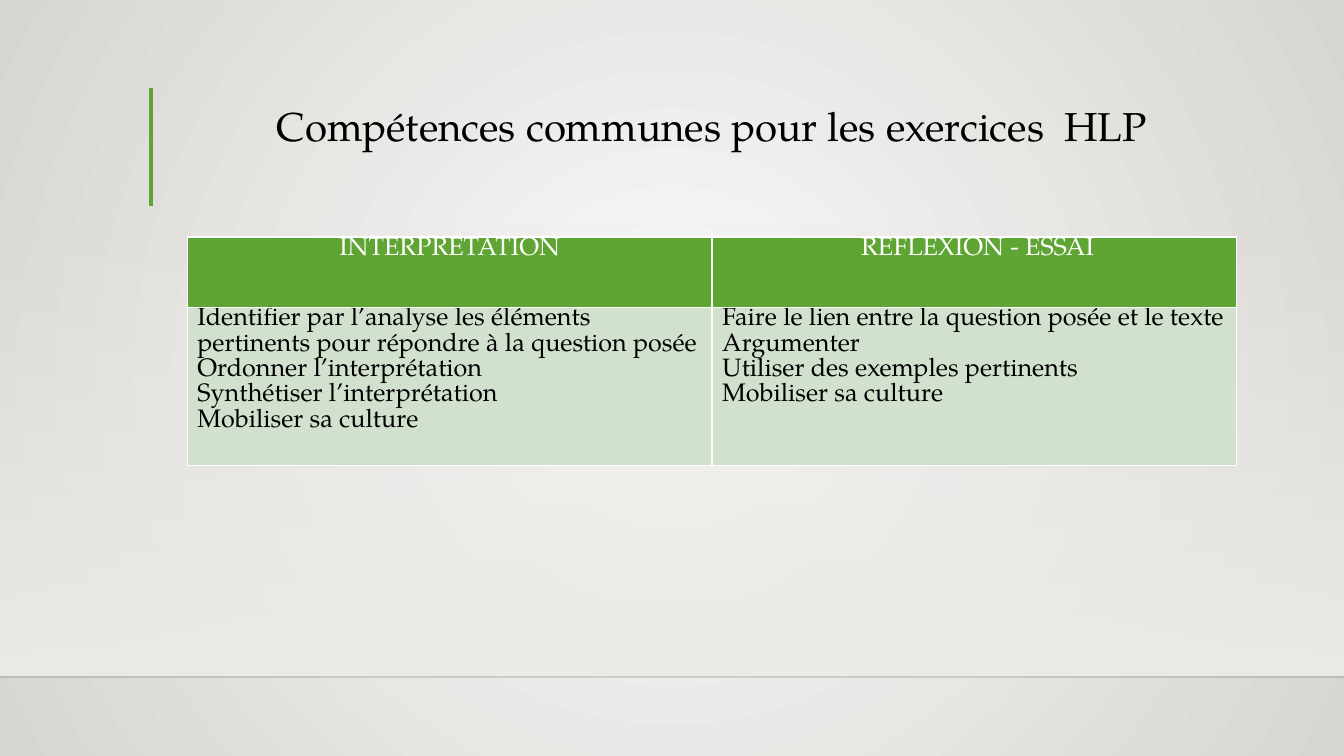
"""Builds the slide on the skills shared by the HLP exercises."""
from lxml import etree
from pptx import Presentation
from pptx.dml.color import RGBColor
from pptx.enum.shapes import MSO_CONNECTOR as CONN, MSO_SHAPE as SHAPE
from pptx.enum.text import MSO_ANCHOR as ANCHOR, PP_ALIGN as ALIGN
from pptx.oxml.ns import qn
from pptx.util import Cm, Pt

TITLE = "Compétences communes pour les exercices\u00a0 HLP"
COLUMNS = [
    ("INTERPRETATION", [
        "Identifier par l’analyse les éléments pertinents pour répondre à la question posée",
        "Ordonner l’interprétation",
        "Synthétiser l’interprétation",
        "Mobiliser sa culture",
    ]),
    (" REFLEXION - ESSAI", [
        "Faire le lien entre la question posée et le texte",
        "Argumenter",
        "Utiliser des exemples pertinents",
        "Mobiliser sa culture",
    ]),
]

FONT = "TeX Gyre Pagella"
BLACK = RGBColor(0, 0, 0)
WHITE = RGBColor(255, 255, 255)
GREEN = RGBColor(0x5F, 0xA5, 0x34)
PALE_GREEN = RGBColor(0xD2, 0xE1, 0xCE)
BG_CENTRE = RGBColor(0xFA, 0xFA, 0xF9)
BG_EDGE = RGBColor(0xD7, 0xD5, 0xD2)
FLOOR = RGBColor(0xED, 0xEB, 0xE7)

WIDTH, HEIGHT = Cm(33.87), Cm(19.05)
LEFT, CONTENT_W = Cm(4.72), Cm(26.45)
ROW_HEIGHTS = (Cm(1.78), Cm(3.98))


def set_gradient(fill, first, last):
    fill.gradient()
    for stop, color, position in zip(fill.gradient_stops, (first, last), (0, 1)):
        stop.color.rgb = color
        stop.position = position


def set_alpha(element, percent):
    color = next(element.iter(qn("a:srgbClr")))
    etree.SubElement(color, qn("a:alpha"), val=str(percent * 1000))


def add_line(slide, x1, y1, x2, y2, color, width):
    line = slide.shapes.add_connector(CONN.STRAIGHT, x1, y1, x2, y2)
    line.line.color.rgb = color
    line.line.width = Pt(width)
    etree.SubElement(line._element.spPr, qn("a:effectLst"))
    return line


def write(tf, lines, size, color, align, spacing):
    for i, text in enumerate(lines):
        p = tf.paragraphs[0] if i == 0 else tf.add_paragraph()
        p.alignment = align
        p.line_spacing = spacing
        r = p.add_run()
        r.text = text
        r.font.name = FONT
        r.font.size = Pt(size)
        r.font.color.rgb = color


def set_borders(cell):
    tc_pr = cell._tc.get_or_add_tcPr()
    for i, side in enumerate(("lnL", "lnR", "lnT", "lnB")):
        ln = etree.Element(qn("a:" + side), w=str(Pt(1)))
        solid = etree.SubElement(ln, qn("a:solidFill"))
        etree.SubElement(solid, qn("a:srgbClr"), val=str(WHITE))
        tc_pr.insert(i, ln)


def add_background(slide):
    set_gradient(slide.background.fill, BG_CENTRE, BG_EDGE)
    grad = next(slide.element.iter(qn("a:gradFill")))
    grad.remove(grad.find(qn("a:lin")))
    circle = etree.SubElement(grad, qn("a:path"), path="circle")
    etree.SubElement(circle, qn("a:fillToRect"), l="50000", t="50000", r="50000", b="50000")

    sp = slide.shapes.add_shape(SHAPE.RECTANGLE, 0, Cm(5.59), WIDTH, Cm(11.43))
    sp.shadow.inherit = False
    sp.line.fill.background()
    set_gradient(sp.fill, FLOOR, FLOOR)
    sp.fill.gradient_angle = 270
    set_alpha(sp._element.spPr, 0)

    horizon = add_line(slide, 0, Cm(17.06), WIDTH, Cm(17.06), BLACK, 1)
    set_alpha(horizon._element.spPr, 20)
    add_line(slide, Cm(3.81), Cm(2.21), Cm(3.81), Cm(5.18), GREEN, 3)


def add_title(slide):
    tf = slide.shapes.add_textbox(LEFT, Cm(2.59), CONTENT_W, Cm(1.32)).text_frame
    tf.word_wrap = True
    tf.vertical_anchor = ANCHOR.BOTTOM
    write(tf, [TITLE], 28.8, BLACK, ALIGN.CENTER, 0.9)


def add_skills_table(slide):
    frame = slide.shapes.add_table(
        2, len(COLUMNS), LEFT, Cm(5.97), CONTENT_W, sum(ROW_HEIGHTS))
    table = frame.table
    for row, height in zip(table.rows, ROW_HEIGHTS):
        row.height = height
    for c, (heading, skills) in enumerate(COLUMNS):
        styles = (([heading], WHITE, ALIGN.CENTER, GREEN),
                  (skills, BLACK, ALIGN.LEFT, PALE_GREEN))
        for r, (lines, color, align, fill) in enumerate(styles):
            cell = table.cell(r, c)
            cell.margin_top = cell.margin_bottom = 0
            cell.fill.solid()
            cell.fill.fore_color.rgb = fill
            set_borders(cell)
            write(cell.text_frame, lines, 18, color, align, 1.0)


def main():
    prs = Presentation()
    prs.slide_width, prs.slide_height = WIDTH, HEIGHT
    slide = prs.slides.add_slide(prs.slide_layouts[6])
    add_background(slide)
    add_title(slide)
    add_skills_table(slide)
    prs.save("out.pptx")


if __name__ == "__main__":
    main()
